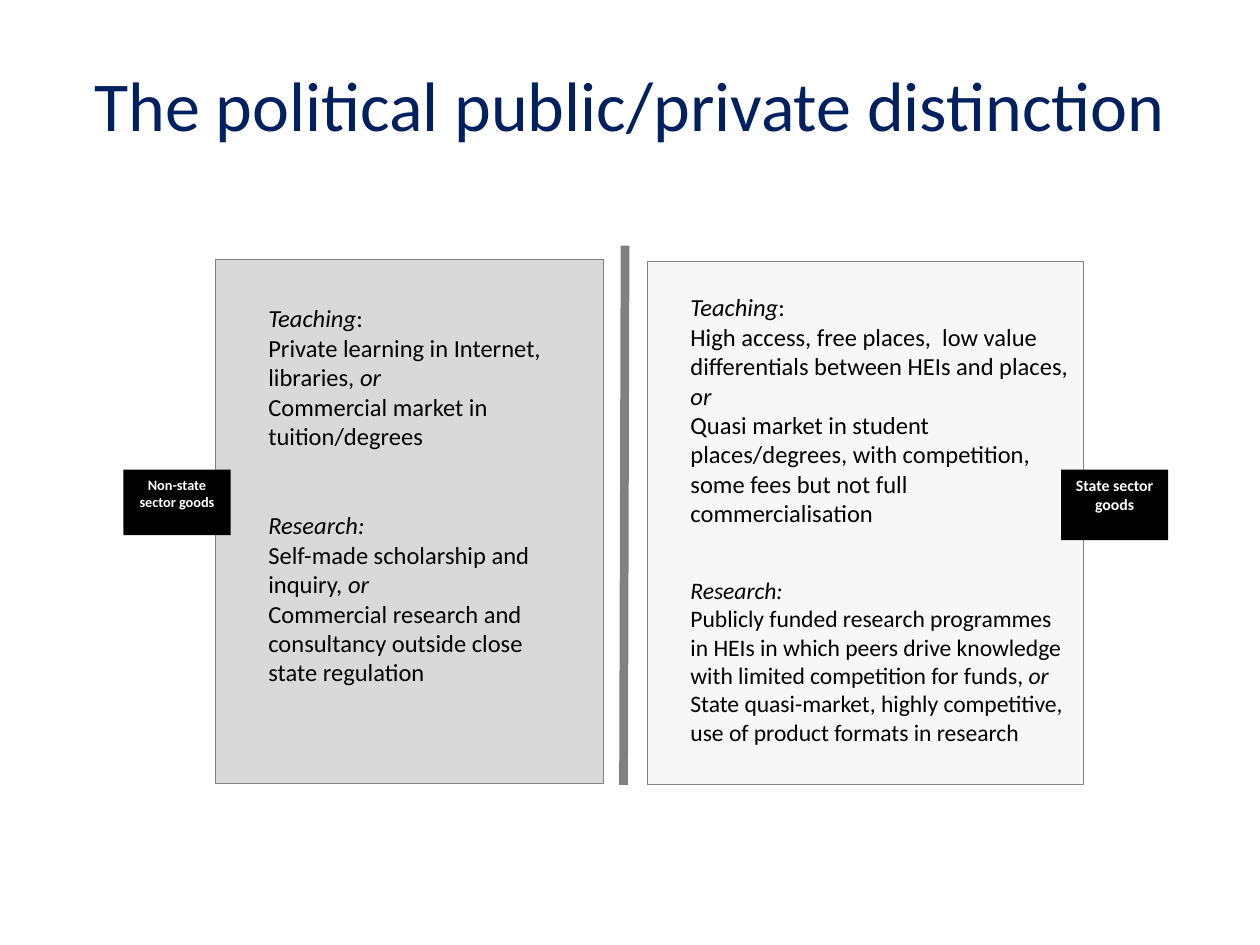
"""Build the slide on the political public/private distinction."""
from lxml import etree
from pptx import Presentation
from pptx import util as u
from pptx.dml.color import RGBColor
from pptx.enum import shapes, text
from pptx.oxml import ns

NAVY = RGBColor(0x00, 0x20, 0x60)
BLACK = RGBColor(0, 0, 0)
WHITE = RGBColor(255, 255, 255)
GREY = RGBColor(0x80, 0x80, 0x80)
PALE = RGBColor(0xD9, 0xD9, 0xD9)
FONT = "Calibri"

TITLE = "The political public/private distinction"
RULE = (12.6, 4.95, 12.57, 15.82)
PANELS = [((4.34, 5.23, 7.82, 10.57), 100), ((13.06, 5.28, 8.79, 10.54), 20)]
LABELS = [
    ("State sector goods", 9, (21.39, 9.47, 2.16, 1.42)),
    ("Non-state sector goods", 8.2, (2.49, 9.47, 2.16, 1.32)),
]
# Each paragraph is a list of (words, italic) runs.
NOTES = [
    ((13.67, 5.77, 8.18, 9.47), 27.5, [
        (14, [
            [("Teaching", True), (":", False)],
            [("High access, free places,  low value differentials between "
              "HEIs and places, ", False), ("or", True)],
            [("Quasi market in student places/degrees, with competition, "
              "some fees but not full commercialisation", False)]]),
        (13.5, [
            [("Research:", True)],
            [("Publicly funded research programmes in HEIs in which peers drive "
              "knowledge with limited competition for funds, ", False), ("or", True)],
            [("State quasi-market, highly competitive, use of product formats "
              "in research", False)]])]),
    ((5.16, 5.99, 6.65, 8.03), 34.2, [
        (14, [
            [("Teaching", True), (":", False)],
            [("Private learning in Internet, libraries, ", False), ("or", True)],
            [("Commercial market in tuition/degrees", False)]]),
        (14, [
            [("Research:", True)],
            [("Self-made scholarship and inquiry, ", False), ("or", True)],
            [("Commercial research and consultancy outside close state "
              "regulation", False)]])]),
]


def place(box):
    return [u.Cm(n) for n in box]


def style(para, size, tint, bold=False):
    font = para.font
    font.name, font.size, font.bold = FONT, u.Pt(size), bold
    font.color.rgb = tint


def add_rect(slide, box, fill):
    rect = slide.shapes.add_shape(shapes.MSO_SHAPE.RECTANGLE, *place(box))
    rect.shadow.inherit = False
    rect.fill.solid()
    rect.fill.fore_color.rgb = fill
    return rect


def add_title(slide):
    title = slide.shapes.title
    title.left, title.top, title.width, title.height = place((0.74, 0, 23.9, 4.37))
    frame = title.text_frame
    frame.text = TITLE
    frame.vertical_anchor = text.MSO_ANCHOR.MIDDLE
    para = frame.paragraphs[0]
    para.alignment = text.PP_ALIGN.CENTER
    para.line_spacing = 0.9
    style(para, 40, NAVY)


def add_rule(slide):
    rule = slide.shapes.add_connector(shapes.MSO_CONNECTOR.STRAIGHT, *place(RULE))
    rule.line.color.rgb = GREY
    rule.line.width = u.Pt(5)
    etree.SubElement(rule.element.spPr, ns.qn("a:effectLst"))


def add_panel(slide, box, alpha):
    panel = add_rect(slide, box, PALE)
    panel.line.color.rgb = GREY
    panel.line.width = u.Pt(0.5)
    if alpha < 100:
        tint = panel.element.spPr.find(".//" + ns.qn("a:srgbClr"))
        etree.SubElement(tint, ns.qn("a:alpha"), val=str(alpha * 1000))


def add_label(slide, words, size, box):
    label = add_rect(slide, box, BLACK)
    label.line.fill.background()
    frame = label.text_frame
    frame.text = words
    frame.word_wrap = True
    frame.vertical_anchor = text.MSO_ANCHOR.TOP
    para = frame.paragraphs[0]
    para.alignment = text.PP_ALIGN.CENTER
    style(para, size, WHITE, True)


def add_note(slide, box, gap, parts):
    frame = slide.shapes.add_textbox(*place(box)).text_frame
    frame.word_wrap = True
    para = None
    for size, lines in parts:
        for num, runs in enumerate(lines):
            first = para is None
            para = frame.paragraphs[0] if first else frame.add_paragraph()
            style(para, size, BLACK)
            if num == 0 and not first:
                para.space_before = u.Pt(gap)
            for words, slant in runs:
                run = para.add_run()
                run.text = words
                run.font.italic = slant


def main():
    deck = Presentation()
    deck.slide_width, deck.slide_height = place((25.4, 19.05))
    slide = deck.slides.add_slide(deck.slide_layouts[5])
    add_rule(slide)
    for panel in PANELS:
        add_panel(slide, *panel)
    add_title(slide)
    for label in LABELS:
        add_label(slide, *label)
    for note in NOTES:
        add_note(slide, *note)
    deck.save("out.pptx")


if __name__ == "__main__":
    main()
